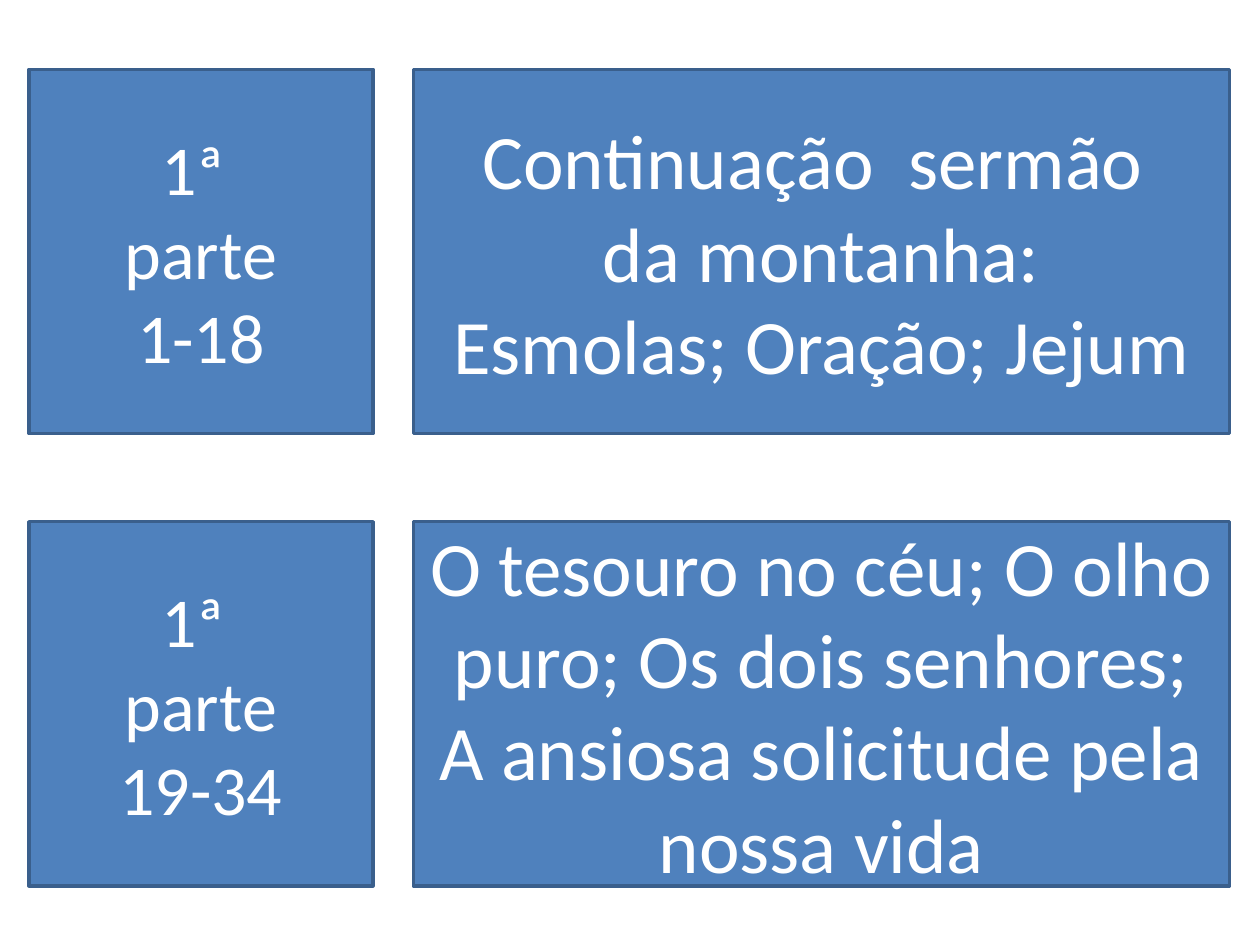
"""Build a slide pairing each part of the chapter with its themes."""
from pptx import Presentation
from pptx.dml.color import RGBColor
from pptx.enum.shapes import MSO_SHAPE
from pptx.enum.text import MSO_ANCHOR, PP_ALIGN
from pptx.util import Inches, Pt

ROWS = [
    (["1ª ", "parte", "1-18"],
     ["Continuação  sermão ", "da montanha:", "Esmolas; Oração; Jejum"]),
    (["1ª ", "parte", "19-34"],
     ["O tesouro no céu; O olho puro; Os dois senhores; "
      "A ansiosa solicitude pela nossa vida"]),
]
COLUMNS = [(0.23, 2.73, 40), (3.28, 6.48, 44)]
TOP, ROW_HEIGHT, ROW_GAP = 0.55, 2.89, 0.7

BLUE = RGBColor(0x4F, 0x81, 0xBD)
DARK_BLUE = RGBColor(0x3A, 0x5F, 0x8C)
WHITE = RGBColor(0xFF, 0xFF, 0xFF)


def add_panel(page, left, top, width, size, lines):
    """Add one blue rectangle with centred lines of text."""
    panel = page.shapes.add_shape(
        MSO_SHAPE.RECTANGLE, Inches(left), Inches(top), Inches(width), Inches(ROW_HEIGHT))
    panel.shadow.inherit = False
    panel.fill.solid()
    panel.fill.fore_color.rgb = BLUE
    panel.line.color.rgb = DARK_BLUE
    panel.line.width = Pt(2)
    frame = panel.text_frame
    frame.word_wrap = True
    frame.vertical_anchor = MSO_ANCHOR.MIDDLE
    frame.text = "\n".join(lines)
    for paragraph in frame.paragraphs:
        paragraph.alignment = PP_ALIGN.CENTER
        paragraph.font.name = "Calibri"
        paragraph.font.size = Pt(size)
        paragraph.font.color.rgb = WHITE


def main():
    """Lay the panels out on a grid and save the deck."""
    deck = Presentation()
    deck.slide_width, deck.slide_height = Inches(10), Inches(7.5)
    page = deck.slides.add_slide(deck.slide_layouts[6])
    for index, row in enumerate(ROWS):
        top = TOP + index * (ROW_HEIGHT + ROW_GAP)
        for (left, width, size), lines in zip(COLUMNS, row):
            add_panel(page, left, top, width, size, lines)
    deck.save("out.pptx")


if __name__ == "__main__":
    main()
